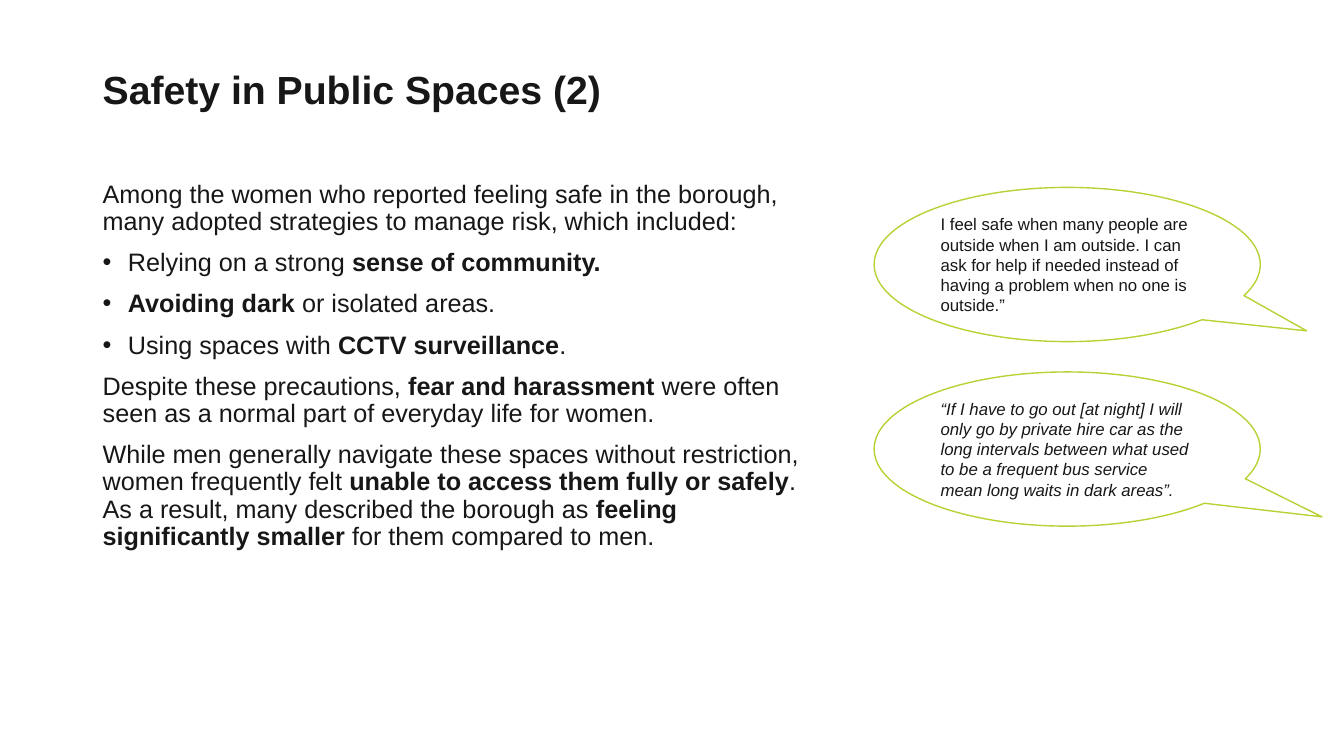
from lxml import etree
from pptx import Presentation
from pptx import util as u
from pptx.dml.color import RGBColor
from pptx.enum import shapes, text
from pptx.oxml.ns import qn


def colour(hex_string):
    return RGBColor.from_string(hex_string)


class SafetySlide:
    FONT = "Arial"
    INK = "181717"
    OUTLINE = "BBD035"
    PAPER = "FFFFFF"

    def __init__(self, deck):
        self.slide = deck.slides.add_slide(deck.slide_layouts[6])

    def style(self, paragraph, size, bold=None, italic=None):
        font = paragraph.font
        font.name, font.size = self.FONT, u.Pt(size)
        font.bold, font.italic = bold, italic
        font.color.rgb = colour(self.INK)

    def frame(self, left, top, width, height):
        box = self.slide.shapes.add_textbox(*map(u.Inches, (left, top, width, height)))
        box.text_frame.word_wrap = True
        return box.text_frame

    def title(self, wording, *place):
        heading = self.frame(*place)
        heading.vertical_anchor = text.MSO_ANCHOR.MIDDLE
        heading.text = wording
        heading.paragraphs[0].line_spacing = 0.9
        self.style(heading.paragraphs[0], 28, bold=True)

    def bullet(self, paragraph):
        properties = paragraph._p.get_or_add_pPr()
        properties.set("marL", str(u.Inches(0.25)))
        properties.set("indent", str(u.Inches(-0.25)))
        etree.SubElement(properties, qn("a:buFont")).set("typeface", self.FONT)
        etree.SubElement(properties, qn("a:buChar")).set("char", "•")

    def body(self, findings, *place):
        """Write paragraphs; "• " starts a bullet and ** encloses bold words."""
        story = self.frame(*place)
        for number, finding in enumerate(findings):
            paragraph = story.add_paragraph() if number else story.paragraphs[0]
            if finding.startswith("• "):
                self.bullet(paragraph)
                finding = finding[2:]
            paragraph.line_spacing = 0.9
            if number:
                paragraph.space_before = u.Pt(10)
            self.style(paragraph, 18)
            for part, words in enumerate(finding.split("**")):
                if words:
                    run = paragraph.add_run()
                    run.text = words
                    if part % 2:
                        run.font.bold = True

    def quote(self, wording, top, tail, italic):
        bubble = self.slide.shapes.add_shape(
            shapes.MSO_SHAPE.OVAL_CALLOUT,
            *map(u.Inches, (8.67, top, 3.83, 1.53)))
        bubble.shadow.inherit = False
        bubble.adjustments[0], bubble.adjustments[1] = tail
        bubble.fill.solid()
        bubble.fill.fore_color.rgb = colour(self.PAPER)
        bubble.line.color.rgb = colour(self.OUTLINE)
        bubble.line.width = u.Pt(1)
        speech = bubble.text_frame
        speech.word_wrap = True
        speech.vertical_anchor = text.MSO_ANCHOR.MIDDLE
        speech.text = wording
        speech.paragraphs[0].alignment = text.PP_ALIGN.LEFT
        self.style(speech.paragraphs[0], 12, italic=italic)


FINDINGS = [
    "Among the women who reported feeling safe in the borough, many adopted "
    "strategies to manage risk, which included:",
    "• Relying on a strong **sense of community.**",
    "• **Avoiding dark **or isolated areas.",
    "• Using spaces with **CCTV surveillance**.",
    "Despite these precautions, **fear and harassment **were often seen as a "
    "normal part of everyday life for women.",
    "While men generally navigate these spaces without restriction, women "
    "frequently felt **unable to access them fully or safely**. As a result, many "
    "described the borough as **feeling significantly smaller **for them compared "
    "to men.",
]
NIGHT_QUOTE = (
    "“If I have to go out [at night] I will only go by private hire car as the "
    "long intervals between what used to be a frequent bus service mean long "
    "waits in dark areas”.")
COMPANY_QUOTE = (
    "I feel safe when many people are outside when I am outside. I can ask for "
    "help if needed instead of having a problem when no one is outside.”")


def main():
    deck = Presentation()
    deck.slide_width, deck.slide_height = u.Inches(13.33), u.Inches(7.5)
    safety = SafetySlide(deck)
    safety.title("Safety in Public Spaces (2)", 0.92, 0.19, 10.69, 1.45)
    safety.body(FINDINGS, 0.92, 1.75, 7.39, 2.7)
    safety.quote(NIGHT_QUOTE, 3.69, (0.66, 0.44), italic=True)
    safety.quote(COMPANY_QUOTE, 1.86, (0.62, 0.43), italic=False)
    deck.save("out.pptx")


if __name__ == "__main__":
    main()
